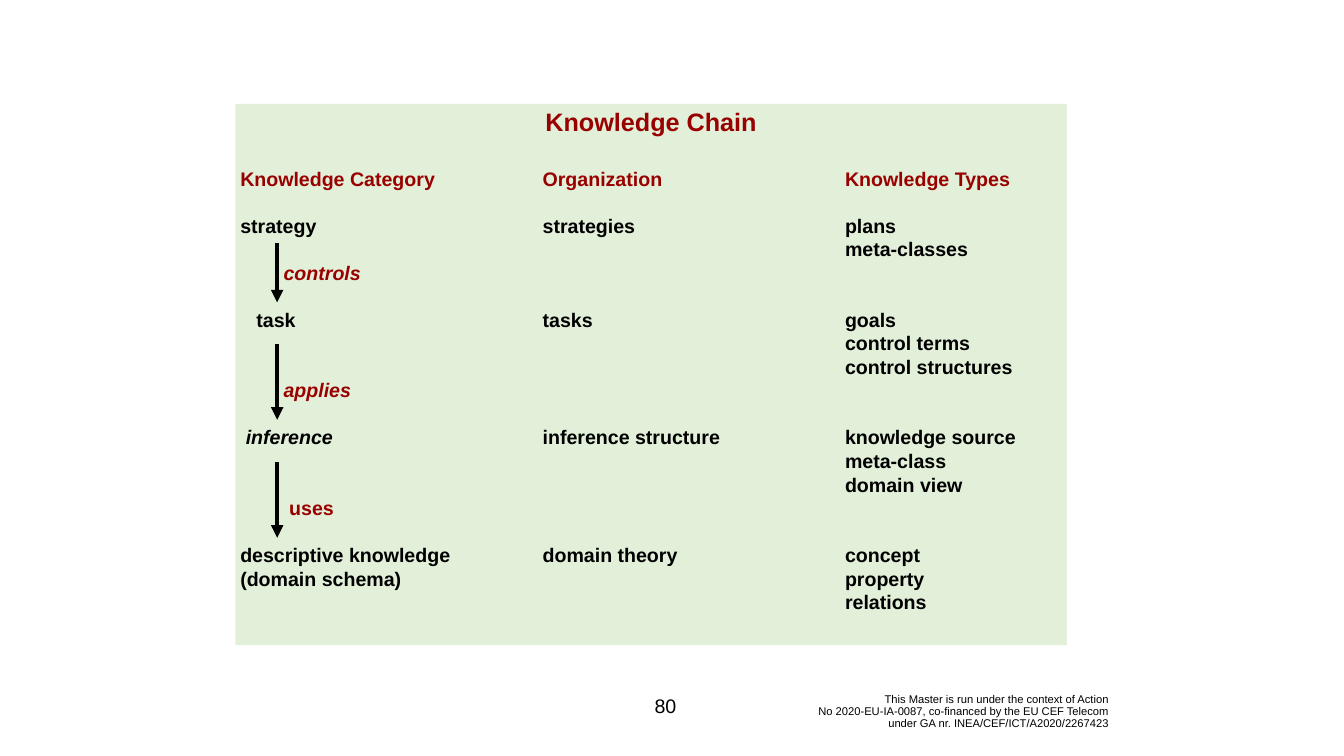
from lxml import etree
from pptx import Presentation
from pptx.dml.color import RGBColor
from pptx.enum.shapes import MSO_CONNECTOR, MSO_SHAPE
from pptx.enum.text import MSO_ANCHOR, PP_ALIGN
from pptx.oxml.ns import qn
from pptx.util import Inches, Pt

COLORS = {"panel": "E2F0D9", "accent": "990000", "text": "000000"}
FONT = "Arial"
BODY_SIZE, TITLE_SIZE = 28, 36
LEADING = 1.2
COLUMN_STEP = 6

# cells, indent of the first cell, colour, italic first cell, lines left free above
ROWS = [
    (["Knowledge Category", "Organization", "Knowledge Types"], 0, "accent", False, 0),
    (["strategy", "strategies", "plans"], 0, "text", False, 1),
    (["", "", "meta-classes"], 0, "text", False, 0),
    (["controls"], 0.86, "accent", True, 0),
    (["task", "tasks", "goals"], 0.32, "text", False, 1),
    (["", "", "control terms"], 0, "text", False, 0),
    (["", "", "control structures"], 0, "text", False, 0),
    (["applies"], 0.86, "accent", True, 0),
    (["inference", "inference structure", "knowledge source"], 0.11, "text", True, 1),
    (["", "", "meta-class"], 0, "text", False, 0),
    (["", "", "domain view"], 0, "text", False, 0),
    (["uses"], 0.97, "accent", False, 0),
    (["descriptive knowledge", "domain theory", "concept"], 0, "text", False, 1),
    (["(domain schema)", "", "property"], 0, "text", False, 0),
    (["", "", "relations"], 0, "text", False, 0),
]
# top and bottom of each arrow, measured from the top of the panel
ARROWS = [(2.77, 3.94), (4.77, 6.27), (7.11, 8.61)]


def rgb(name):
    return RGBColor.from_string(COLORS[name])


def style_run(run, size, color, bold=False, italic=False):
    font = run.font
    font.name, font.size = FONT, Pt(size)
    font.bold, font.italic = bold, italic
    font.color.rgb = rgb(color)


def set_tabs(paragraph, positions):
    properties = paragraph._p.get_or_add_pPr()
    tab_list = etree.SubElement(properties, qn("a:tabLst"))
    for position in positions:
        etree.SubElement(tab_list, qn("a:tab"), pos=str(Inches(position)), algn="l")


def add_row(text_frame, cells, indent, color, italic, free_lines):
    paragraph = text_frame.add_paragraph()
    stops = [COLUMN_STEP, 2 * COLUMN_STEP]
    set_tabs(paragraph, [indent] + stops if indent else stops)
    paragraph.alignment = PP_ALIGN.LEFT
    paragraph.line_spacing = Pt(BODY_SIZE * LEADING)
    paragraph.space_before = Pt(free_lines * BODY_SIZE * LEADING)
    first = ("\t" if indent else "") + cells[0]
    rest = "".join("\t" + cell for cell in cells[1:])
    for text, slanted in ((first, italic), (rest, False)):
        if text:
            run = paragraph.add_run()
            run.text = text
            style_run(run, BODY_SIZE, color, True, slanted)
    return paragraph


def add_arrow(slide, x, top, bottom):
    arrow = slide.shapes.add_connector(
        MSO_CONNECTOR.STRAIGHT, Inches(x), Inches(top), Inches(x), Inches(bottom))
    arrow.line.width = Pt(6)
    arrow.line.color.rgb = rgb("text")
    etree.SubElement(arrow.line._get_or_add_ln(), qn("a:tailEnd"), type="triangle")
    etree.SubElement(arrow._element.spPr, qn("a:effectLst"))


def add_knowledge_panel(slide, left, top, width, height):
    panel = slide.shapes.add_shape(
        MSO_SHAPE.RECTANGLE, Inches(left), Inches(top), Inches(width), Inches(height))
    panel.shadow.inherit = False
    panel.fill.solid()
    panel.fill.fore_color.rgb = rgb("panel")
    panel.line.fill.background()
    text_frame = panel.text_frame
    text_frame.word_wrap = True
    text_frame.vertical_anchor = MSO_ANCHOR.TOP

    # Title
    title = text_frame.paragraphs[0]
    title.text = "Knowledge Chain"
    title.alignment = PP_ALIGN.CENTER
    title.line_spacing = Pt(TITLE_SIZE * LEADING)
    style_run(title.runs[0], TITLE_SIZE, "accent", True)

    # Three columns on tab stops
    header, *_ = [add_row(text_frame, *row) for row in ROWS]
    header.space_before = Pt(TITLE_SIZE * LEADING)

    # Arrows down the first column
    for start, end in ARROWS:
        add_arrow(slide, left + 0.83, top + start, top + end)


def add_note(slide, left, top, width, height, text, size, alignment, spacing=1.0):
    box = slide.shapes.add_textbox(
        Inches(left), Inches(top), Inches(width), Inches(height))
    text_frame = box.text_frame
    text_frame.word_wrap = True
    text_frame.vertical_anchor = MSO_ANCHOR.MIDDLE
    paragraph = text_frame.paragraphs[0]
    paragraph.text = text
    paragraph.alignment = alignment
    paragraph.line_spacing = spacing
    for run in paragraph.runs:
        style_run(run, size, "text")


def main():
    presentation = Presentation()
    presentation.slide_width, presentation.slide_height = Inches(26.67), Inches(15)
    slide = presentation.slides.add_slide(presentation.slide_layouts[6])

    # Footer and slide number
    add_note(slide, 15.02, 13.74, 7.08, 0.76,
             "This Master is run under the context of Action\n"
             "No 2020-EU-IA-0087, co-financed by the EU CEF Telecom\n"
             "under GA nr. INEA/CEF/ICT/A2020/2267423",
             16, PP_ALIGN.RIGHT, 0.9)
    add_note(slide, 12.65, 13.61, 1.11, 0.8, "80", 28, PP_ALIGN.CENTER)

    add_knowledge_panel(slide, 4.67, 2.06, 16.5, 10.74)
    presentation.save("out.pptx")


if __name__ == "__main__":
    main()
